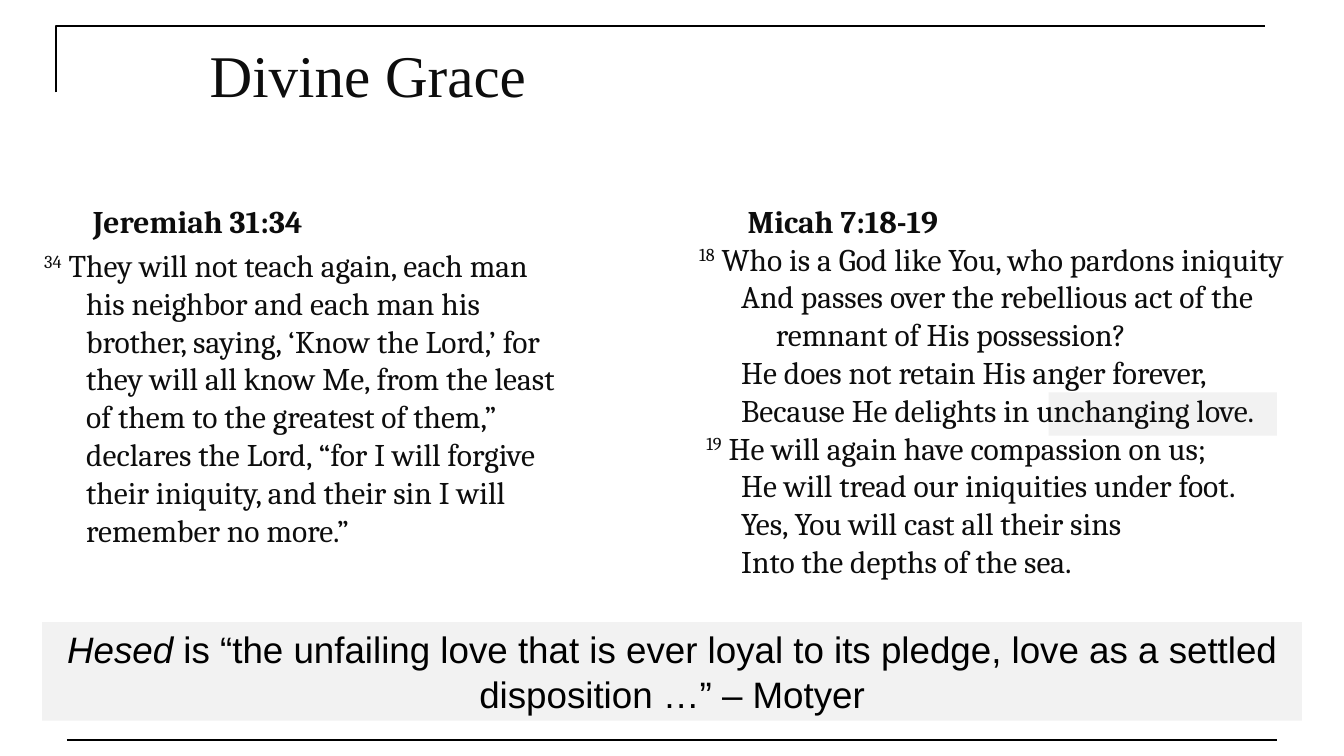
import pptx
import pptx.dml.color
import pptx.enum.shapes
import pptx.enum.text
import pptx.util
from lxml import etree

Pt = pptx.util.Pt
ANCHOR = pptx.enum.text.MSO_ANCHOR
ALIGN = pptx.enum.text.PP_ALIGN
AUTO_SIZE = pptx.enum.text.MSO_AUTO_SIZE

COLOURS = {"rule": "000000", "text": "0D0D0D", "quote": "000000", "panel": "F2F2F2"}

TITLE = {"name": "Times New Roman", "size": Pt(45)}
VERSE = {"name": "Cambria", "size": Pt(24), "bold": False}
HEADING = {**VERSE, "bold": True}
QUOTE = {"name": "Arial", "size": Pt(28), "italic": False}
EMPHASIS = {**QUOTE, "italic": True}

# Paragraph layouts: left margin, first-line indent, space before
HEADING_LAYOUT = (37, 0, 0)
PROSE_LAYOUT = (32, -32, 4.8)
VERSE_LAYOUT = (0, 0, 0)
SECOND_VERSE_LAYOUT = (5.5, 0, 0)
POETRY_LAYOUT = (58.5, -26.5, 0)

JEREMIAH = [
    (HEADING_LAYOUT, "", "Jeremiah 31:34"),
    (PROSE_LAYOUT, "34",
     " They will not teach again, each man his neighbor and each man his brother, "
     "saying, ‘Know the Lord,’ for they will all know Me, from the least of them to "
     "the greatest of them,” declares the Lord, “for I will forgive their iniquity, "
     "and their sin I will remember no more.”"),
]
MICAH = [
    (HEADING_LAYOUT, "", "Micah 7:18-19"),
    (VERSE_LAYOUT, "18", " Who is a God like You, who pardons iniquity"),
    (POETRY_LAYOUT, "",
     "And passes over the rebellious act of the remnant of His possession?"),
    (POETRY_LAYOUT, "", "He does not retain His anger forever,"),
    (POETRY_LAYOUT, "", "Because He delights in unchanging love."),
    (SECOND_VERSE_LAYOUT, "19", " He will again have compassion on us;"),
    (POETRY_LAYOUT, "", "He will tread our iniquities under foot."),
    (POETRY_LAYOUT, "", "Yes, You will cast all their sins"),
    (POETRY_LAYOUT, "", "Into the depths of the sea."),
]


def colour(name):
    return pptx.dml.color.RGBColor.from_string(COLOURS[name])


def set_attributes(target, values):
    for name, value in values.items():
        setattr(target, name, value)


def add_run(paragraph, text, font, colour_name, superscript=False):
    run = paragraph.add_run()
    run.text = text
    set_attributes(run.font, font)
    run.font.color.rgb = colour(colour_name)
    if superscript:
        run._r.get_or_add_rPr().set("baseline", "30000")


def format_frame(frame, anchor):
    set_attributes(frame, {
        "word_wrap": True, "auto_size": AUTO_SIZE.NONE, "vertical_anchor": anchor,
        "margin_left": Pt(7.7), "margin_right": Pt(7.7),
        "margin_top": Pt(3.8), "margin_bottom": Pt(3.8),
    })


def format_rule(line):
    line.color.rgb = colour("rule")
    line.width = Pt(1.5)


def add_frame_lines(slide):
    # Corner at the top left
    builder = slide.shapes.build_freeform(Pt(42.5), Pt(70.5), scale=1.0)
    builder.add_line_segments([(Pt(42.5), Pt(19.5)), (Pt(964), Pt(19.5))], close=False)
    corner = builder.convert_to_shape()
    corner.fill.background()
    corner.shadow.inherit = False
    format_rule(corner.line)

    # Rule along the bottom
    rule = slide.shapes.add_connector(
        pptx.enum.shapes.MSO_CONNECTOR.STRAIGHT, Pt(51), Pt(564), Pt(973), Pt(564))
    format_rule(rule.line)
    etree.SubElement(rule._element.spPr, pptx.oxml.ns.qn("a:effectLst"))


def add_title(slide, text):
    title = slide.shapes.title
    set_attributes(title, {"left": Pt(152), "top": Pt(23),
                           "width": Pt(802), "height": Pt(67)})
    format_frame(title.text_frame, ANCHOR.MIDDLE)
    paragraph = title.text_frame.paragraphs[0]
    paragraph.alignment = ALIGN.LEFT
    add_run(paragraph, text, TITLE, "text")


def add_panel(slide, left, top, width, height):
    panel = slide.shapes.add_shape(
        pptx.enum.shapes.MSO_SHAPE.RECTANGLE, Pt(left), Pt(top), Pt(width), Pt(height))
    panel.fill.solid()
    panel.fill.fore_color.rgb = colour("panel")
    panel.line.fill.background()
    panel.shadow.inherit = False
    return panel


def add_passage(slide, left, width, lines):
    box = slide.shapes.add_textbox(Pt(left), Pt(150), Pt(width), Pt(300))
    frame = box.text_frame
    format_frame(frame, ANCHOR.TOP)
    for index, (layout, verse_number, text) in enumerate(lines):
        paragraph = frame.add_paragraph() if index else frame.paragraphs[0]
        margin, indent, space_before = layout
        properties = paragraph._p.get_or_add_pPr()
        properties.set("marL", str(Pt(margin)))
        properties.set("indent", str(Pt(indent)))
        paragraph.space_before = Pt(space_before)
        if verse_number:
            add_run(paragraph, verse_number, VERSE, "text", superscript=True)
        add_run(paragraph, text, HEADING if layout is HEADING_LAYOUT else VERSE, "text")


def add_quote(slide):
    panel = add_panel(slide, 32, 474, 960, 75)
    set_attributes(panel.text_frame, {
        "word_wrap": True, "vertical_anchor": ANCHOR.MIDDLE,
        "auto_size": AUTO_SIZE.SHAPE_TO_FIT_TEXT})
    paragraph = panel.text_frame.paragraphs[0]
    paragraph.alignment = ALIGN.CENTER
    add_run(paragraph, "Hesed", EMPHASIS, "quote")
    add_run(paragraph,
            " is “the unfailing love that is ever loyal to its pledge, "
            "love as a settled disposition …” – Motyer", QUOTE, "quote")


def main():
    presentation = pptx.Presentation()
    presentation.slide_width = Pt(1024)
    presentation.slide_height = Pt(576)
    slide = presentation.slides.add_slide(presentation.slide_layouts[5])

    add_frame_lines(slide)
    add_title(slide, "Divine Grace")
    add_passage(slide, 26, 409, JEREMIAH)
    add_quote(slide)
    # Highlight behind "unchanging love"
    add_panel(slide, 799, 299, 174, 33)
    add_passage(slide, 525, 491, MICAH)

    presentation.save("out.pptx")


if __name__ == "__main__":
    main()
